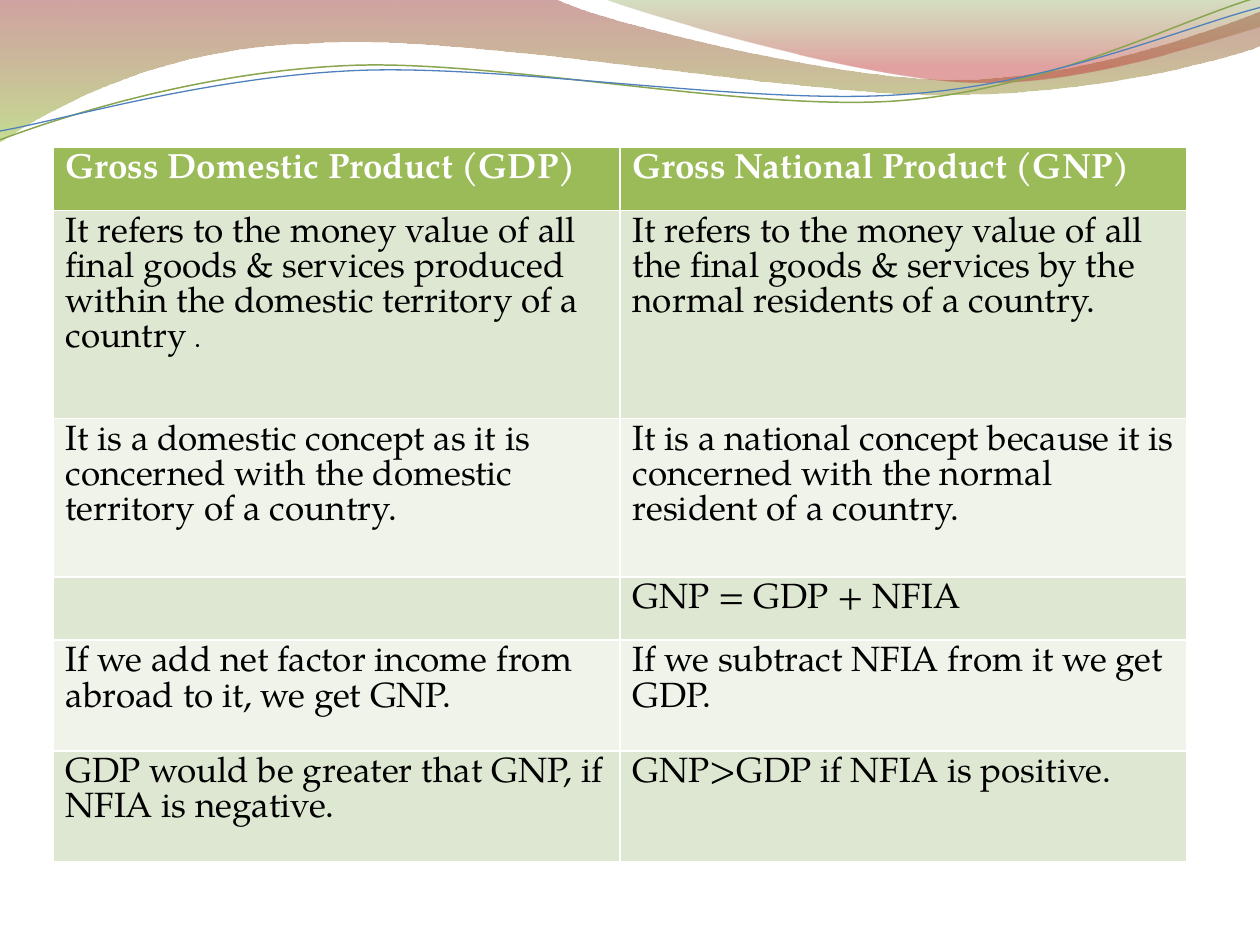
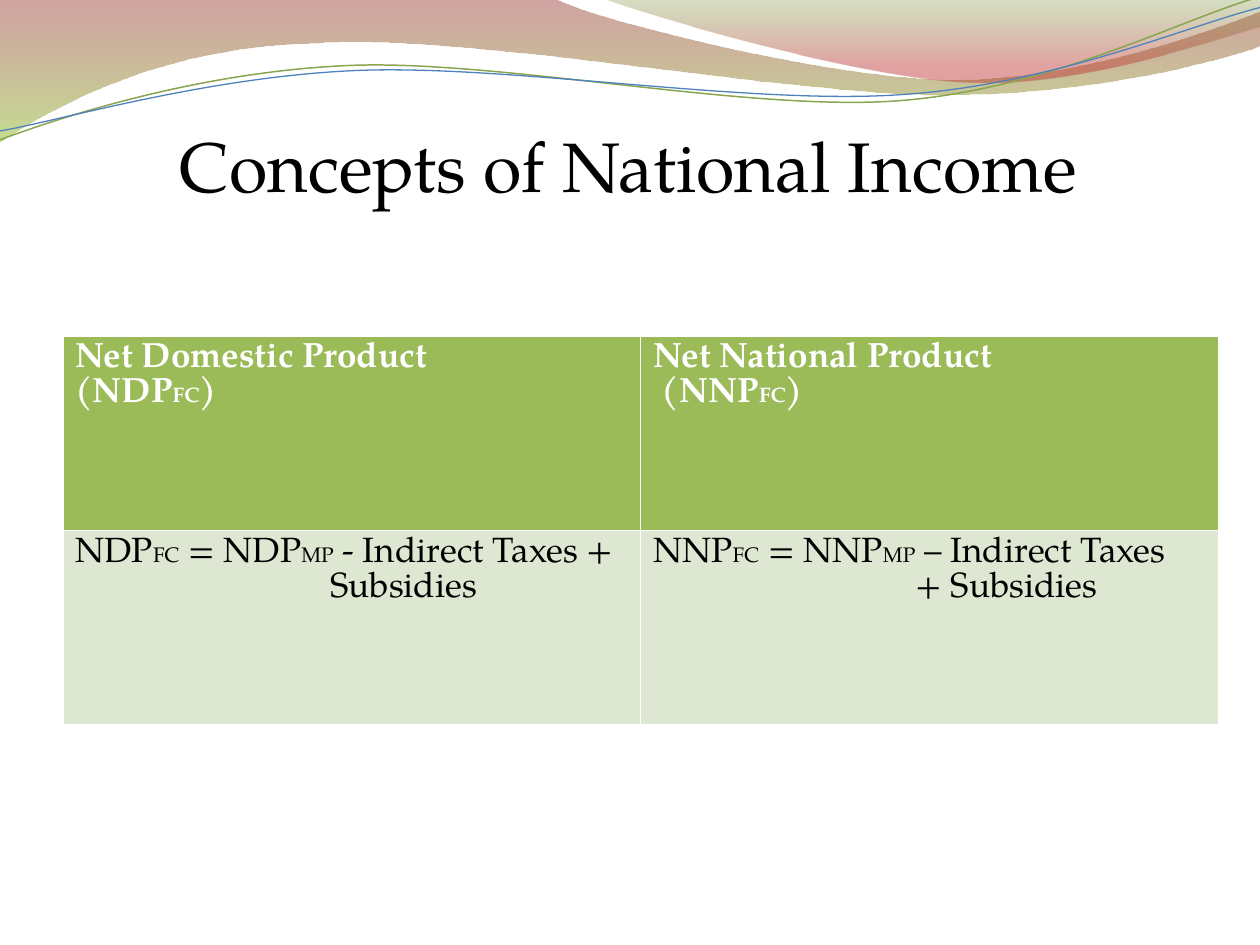
"""Build two slides that compare measures of national income."""
from math import cos, radians, sin

from lxml import etree
from pptx import Presentation
from pptx.dml.color import RGBColor
from pptx.oxml.ns import qn
from pptx.util import Inches, Pt

WHITE = RGBColor(0xFF, 0xFF, 0xFF)
BLACK = RGBColor(0, 0, 0)
GREEN = RGBColor(0x9B, 0xBB, 0x59)
SAGE = RGBColor(0xDE, 0xE7, 0xD1)
MIST = RGBColor(0xEF, 0xF3, 0xEA)
BRICK = RGBColor(0x97, 0x33, 0x30)
LIME = RGBColor(0x95, 0xC2, 0x38)
MOSS = RGBColor(0x76, 0x95, 0x37)
RED = RGBColor(0xBE, 0x33, 0x30)
OLIVE = RGBColor(0x89, 0xA5, 0x4F)
BLUE = RGBColor(0x4F, 0x81, 0xBD)
FONT = "TeX Gyre Pagella"
TILT = 357.3

BANDS = [
    {"curve": [(0, 0), (4.4, -0.01),
               (4.76, 0.17, 6.64, 0.63, 7.58, 0.63),
               (8.53, 0.63, 9.58, 0.26, 10, 0.09), (10.01, 0.36),
               (9.83, 0.44, 8.7, 0.76, 7.46, 0.75),
               (6.22, 0.75, 3.82, 0.28, 2.57, 0.34),
               (1.29, 0.36, 0.46, 0.83, -0.01, 1.13), (0, 0)],
     "stops": [(0, BRICK, 45), (1, LIME, 55)]},
    {"curve": [(4.79, -0.01), (5.09, 0.11, 6.82, 0.62, 7.69, 0.65),
               (8.56, 0.69, 9.61, 0.32, 10, 0.21), (10, 0),
               (4.79, -0.01)],
     "stops": [(0, MOSS, 30), (0.8, RED, 45)]},
    {"curve": [(0, 1.11), (0.48, 0.93, 1.58, 0.57, 2.77, 0.52),
               (3.95, 0.47, 5.93, 0.89, 7.13, 0.8),
               (8.33, 0.71, 9.38, 0.15, 9.98, -0.02)],
     "line": (OLIVE, 0.85), "hub": (4.99, 0.57)},
    {"curve": [(0, 1.04), (0.47, 0.96, 1.64, 0.61, 2.83, 0.56),
               (4.03, 0.51, 5.97, 0.84, 7.17, 0.75),
               (8.36, 0.67, 9.41, 0.21, 10, 0.06)],
     "line": (BLUE, 0.75), "hub": (5, 0.59)},
]

SLIDES = [
    {"title": None, "at": (0.42, 1.17), "width": 9, "small": 16,
     "heights": [0.5, 1.65, 1.26, 0.5, 0.88, 0.88],
     "rows": [
         [[("Gross Domestic Product (GDP)", 0)],
          [("Gross National Product (GNP)", 0)]],
         [[("It refers to the money value of all final goods & services "
            "produced within the domestic territory of a country| .|", 0)],
          [("It refers to the money value of all the final goods & services "
            "by the normal residents of a country.", 0)]],
         [[("It is a domestic concept as it is concerned with the domestic "
            "territory of a country.", 0)],
          [("It is a national concept because it is concerned with the "
            "normal resident of a country.", 0)]],
         [[], [("GNP = GDP + NFIA", 0)]],
         [[("If we add net factor income from abroad to it, we get GNP.", 0)],
          [("If we subtract NFIA from it we get GDP.", 0)]],
         [[("GDP would be greater that GNP, if NFIA is negative.", 0)],
          [("GNP>GDP if NFIA is positive.", 0)]],
     ]},
    {"title": "Concepts of National Income", "at": (0.5, 2.67),
     "width": 9.17, "small": 12, "heights": [1.54, 1.54],
     "rows": [
         [[("Net Domestic Product\n(NDP|FC|)", 0)],
          [("Net National Product", 0), (" (NNP|FC|)", 0)]],
         [[("NDP|FC| = NDP|MP| - Indirect Taxes +", 0), ("Subsidies", 2.02)],
          [("NNP|FC| = NNP|MP| – Indirect Taxes", 0),
           ("+ Subsidies", 2.08)]],
     ]},
]


def level(point, hub):
    """Turn a point back by the tilt about a hub."""
    turn = radians(-TILT)
    x, y = point[0] - hub[0], point[1] - hub[1]
    return (hub[0] + x * cos(turn) - y * sin(turn),
            hub[1] + x * sin(turn) + y * cos(turn))


def add_wave(slide, band):
    """Draw a freeform of lines and cubic curves."""
    hub = band.get("hub")
    parts = []
    for part in band["curve"]:
        pairs = list(zip(part[::2], part[1::2]))
        if hub:
            pairs = [level(pair, hub) for pair in pairs]
        parts.append([(Inches(x), Inches(y)) for x, y in pairs])
    ends = [part[-1] for part in parts]
    pen = slide.shapes.build_freeform(*ends[0])
    pen.add_line_segments(ends[1:], close=not hub)
    wave = pen.convert_to_shape()
    legs = list(wave._element.iter(qn("a:lnTo")))
    for leg, part in zip(legs, parts[1:]):
        if len(part) == 3:
            leg.tag = qn("a:cubicBezTo")
            for n, (x, y) in enumerate(part[:2]):
                knot = etree.Element(qn("a:pt"), x=str(x - wave.left),
                                     y=str(y - wave.top))
                leg.insert(n, knot)
    if hub:
        wave.rotation = TILT
    return wave


def add_band(slide, band):
    """Style one wave, shaded or as a line."""
    wave = add_wave(slide, band)
    wave.shadow.inherit = False
    if "line" in band:
        wave.fill.background()
        wave.line.color.rgb, size = band["line"]
        wave.line.width = Pt(size)
        return
    wave.line.fill.background()
    wave.fill.gradient()
    wave.fill.gradient_angle = 270
    for stop, (place, color, _) in zip(wave.fill.gradient_stops,
                                       band["stops"]):
        stop.position = place
        stop.color.rgb = color
    tints = wave._element.spPr.iter(qn("a:srgbClr"))
    for tint, (_, _, alpha) in zip(tints, band["stops"]):
        etree.SubElement(tint, qn("a:alpha"), val=str(alpha * 1000))


def add_run(para, text, size, color, bold=False):
    """Add text with its format, broken at each line end."""
    for n, line in enumerate(text.split("\n")):
        if n:
            para.add_line_break()
        run = para.add_run()
        run.text = line
        for key, val in {"name": FONT, "size": Pt(size),
                         "bold": bold}.items():
            setattr(run.font, key, val)
        run.font.color.rgb = color


def fill_cell(cell, row, lines, small):
    """Write and shade one cell."""
    head = row == 0
    frame = cell.text_frame
    for n, (text, indent) in enumerate(lines):
        para = frame.add_paragraph() if n else frame.paragraphs[0]
        if indent:
            para._p.get_or_add_pPr().set("marL", str(Inches(indent)))
        for k, part in enumerate(text.split("|")):
            if part:
                add_run(para, part, small if k % 2 else 20,
                        WHITE if head else BLACK, head)
    cell.fill.solid()
    cell.fill.fore_color.rgb = GREEN if head else SAGE if row % 2 else MIST


def add_grid(slide, data):
    """Add the table that compares two measures."""
    rows, highs = data["rows"], data["heights"]
    left, top = data["at"]
    grid = slide.shapes.add_table(
        len(rows), 2, Inches(left), Inches(top),
        Inches(data["width"]), Inches(sum(highs))).table
    for r, (cells, high) in enumerate(zip(rows, highs)):
        grid.rows[r].height = Inches(high)
        for c, lines in enumerate(cells):
            fill_cell(grid.cell(r, c), r, lines, data["small"])


def add_title(slide, text):
    """Add the large title."""
    box = slide.shapes.add_textbox(Inches(1.33), Inches(0.92),
                                   Inches(7.42), Inches(0.77))
    box.text_frame.word_wrap = True
    add_run(box.text_frame.paragraphs[0], text, 40, BLACK)


def main():
    """Build and save the deck."""
    deck = Presentation()
    deck.slide_width, deck.slide_height = Inches(10), Inches(7.5)
    for data in SLIDES:
        slide = deck.slides.add_slide(deck.slide_layouts[6])
        for band in BANDS:
            add_band(slide, band)
        add_grid(slide, data)
        if data["title"]:
            add_title(slide, data["title"])
    deck.save("out.pptx")


if __name__ == "__main__":
    main()
